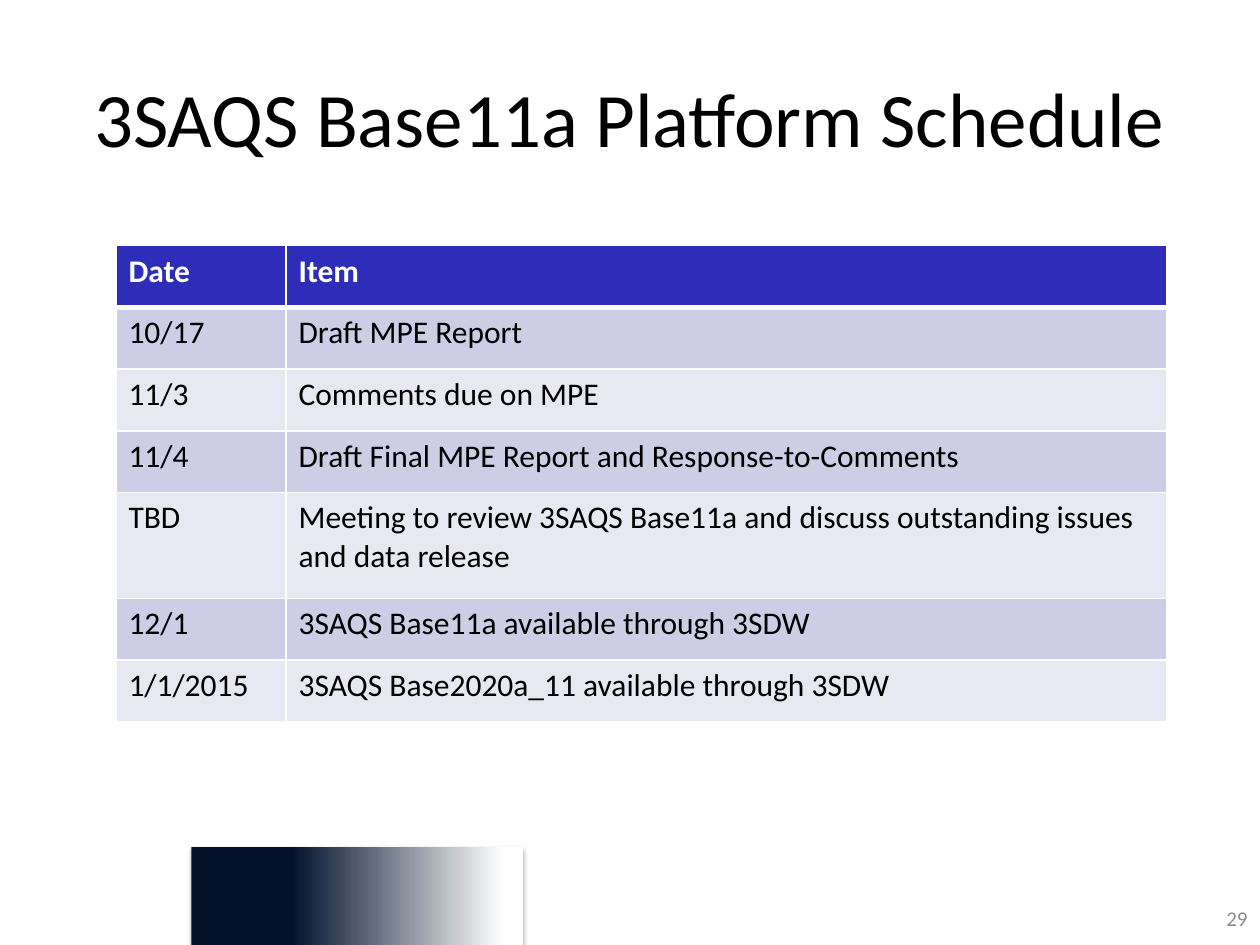
from typing import NamedTuple

from lxml import etree
from pptx import Presentation
from pptx.dml.color import RGBColor
from pptx.enum import shapes, text
from pptx.oxml import parse_xml
from pptx.oxml.ns import nsdecls, qn
from pptx.util import Inches, Pt

FONT = "Calibri"
WHITE, BLACK, GREY, NAVY = "FFFFFF", "000000", "8C8C8C", "03112B"
HEADER, BANDS = "2D2DB9", ("CDCDE6", "E8E8F3")
COLUMN_WIDTHS = (1.35, 6.99)


class Row(NamedTuple):
    date: str
    item: str
    height: float = 0.49


SCHEDULE = [
    Row("Date", "Item"),
    Row("10/17", "Draft MPE Report"),
    Row("11/3", "Comments due on MPE"),
    Row("11/4", "Draft Final MPE Report and Response-to-Comments"),
    Row("TBD", "Meeting to review 3SAQS Base11a and discuss outstanding "
               "issues and data release", 0.84),
    Row("12/1", "3SAQS Base11a available through 3SDW"),
    Row("1/1/2015", "3SAQS Base2020a_11 available through 3SDW"),
]


def rgb(color: str) -> RGBColor:
    return RGBColor.from_string(color)


def write(tf, words: str, *, size: float, color: str = BLACK, bold: bool = False,
          align=text.PP_ALIGN.LEFT, anchor=text.MSO_ANCHOR.TOP) -> None:
    tf.word_wrap = True
    tf.vertical_anchor = anchor
    p = tf.paragraphs[0]
    p.alignment = align
    r = p.add_run()
    r.text = words
    r.font.name, r.font.size, r.font.bold = FONT, Pt(size), bold
    r.font.color.rgb = rgb(color)


def set_borders(cell, **widths: float) -> None:
    """Draw white cell borders; keys are L, R, T, B and values are points."""
    props = cell._tc.get_or_add_tcPr()
    for index, (side, width) in enumerate(widths.items()):
        line = etree.Element(qn(f"a:ln{side}"), w=str(Pt(width)))
        fill = etree.SubElement(line, qn("a:solidFill"))
        etree.SubElement(fill, qn("a:srgbClr"), val=WHITE)
        props.insert(index, line)


def add_gradient_block(s) -> None:
    sp = s.shapes.add_shape(shapes.MSO_SHAPE.RECTANGLE, Inches(1.52), Inches(6.72),
                            Inches(2.63), Inches(0.78))
    sp.line.fill.background()
    sp.fill.gradient()
    sp.fill.gradient_angle = 0
    for stop, (position, color) in zip(sp.fill.gradient_stops,
                                       ((0.3, NAVY), (0.94, WHITE))):
        stop.position, stop.color.rgb = position, rgb(color)
    sp._element.spPr.append(parse_xml(
        f'<a:effectLst {nsdecls("a")}><a:outerShdw blurRad="{Pt(3.1)}" '
        f'dist="{Pt(1.8)}" dir="5400000" rotWithShape="0">'
        f'<a:srgbClr val="{BLACK}"><a:alpha val="35000"/></a:srgbClr>'
        '</a:outerShdw></a:effectLst>'))


def add_schedule(s, rows: list[Row]) -> None:
    table = s.shapes.add_table(
        len(rows), len(COLUMN_WIDTHS), Inches(0.92), Inches(1.95),
        Inches(sum(COLUMN_WIDTHS)), Inches(sum(row.height for row in rows))).table
    for column, width in zip(table.columns, COLUMN_WIDTHS):
        column.width = Inches(width)
    for i, row in enumerate(rows):
        table.rows[i].height = Inches(row.height)
        is_header = i == 0
        for j, words in enumerate((row.date, row.item)):
            cell = table.cell(i, j)
            cell.fill.solid()
            cell.fill.fore_color.rgb = rgb(HEADER if is_header else BANDS[(i - 1) % 2])
            write(cell.text_frame, words, size=18, bold=is_header,
                  color=WHITE if is_header else BLACK)
            set_borders(cell, L=1, R=1, T=3 if i == 1 else 1, B=3 if is_header else 1)


def main() -> None:
    prs = Presentation()
    prs.slide_width, prs.slide_height = Inches(10), Inches(7.5)
    s = prs.slides.add_slide(prs.slide_layouts[5])

    add_gradient_block(s)
    number = s.shapes.add_textbox(Inches(9.49), Inches(7.09), Inches(0.51), Inches(0.4))
    write(number.text_frame, "29", size=12, color=GREY, align=text.PP_ALIGN.RIGHT,
          anchor=text.MSO_ANCHOR.MIDDLE)

    title = s.shapes.title
    title.left, title.top = Inches(0.5), Inches(0.3)
    title.width, title.height = Inches(9), Inches(1.25)
    write(title.text_frame, "3SAQS Base11a Platform Schedule", size=44,
          align=text.PP_ALIGN.CENTER, anchor=text.MSO_ANCHOR.MIDDLE)

    add_schedule(s, SCHEDULE)
    prs.save("out.pptx")


if __name__ == "__main__":
    main()
